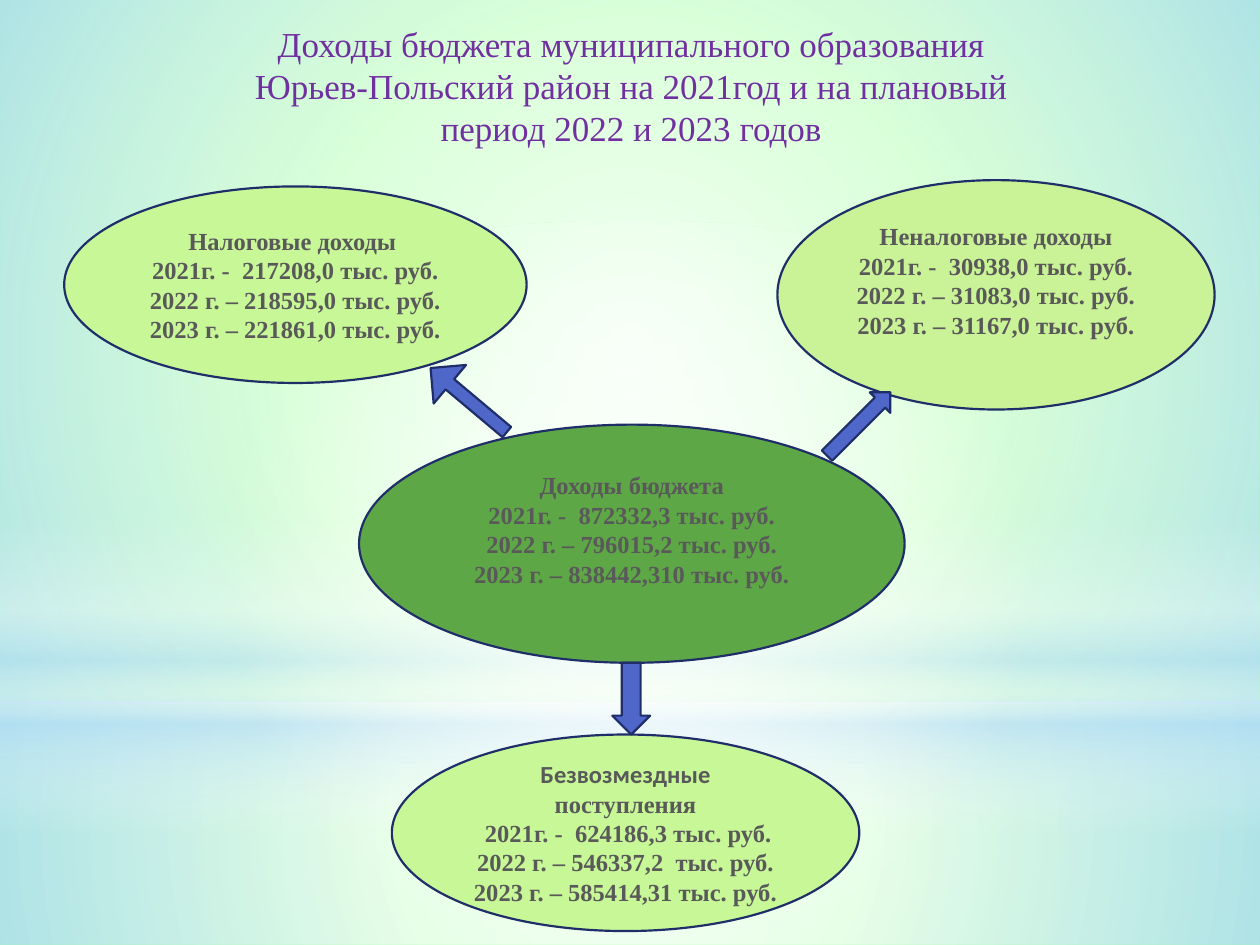
import pptx
import pptx.util
import pptx.dml.color
import pptx.enum.shapes
import pptx.enum.text
import pptx.oxml
import pptx.oxml.ns

Inches = pptx.util.Inches
Pt = pptx.util.Pt
SHAPES = pptx.enum.shapes.MSO_SHAPE

COLORS = {
    "background": "99FF99", "white": "FFFFFF", "sky": "B4DCFA",
    "title": "7030A0", "text": "595959", "outline": "1F2E69",
    "total": "5EA747", "source": "C7F797", "non_tax": "CAF297", "arrow": "4E67C8",
}
SERIF, SANS = "Times New Roman", "Calibri"

GLOWS = [
    (SHAPES.RECTANGLE, (0, 5.58, 10, 1.92), "circle",
     [(0, "white", 91), (37, "white", 76), (100, "sky", 79)]),
    (SHAPES.RECTANGLE, (0, 0, 10, 5.58), "circle",
     [(0, "white", 89), (48, "white", 62), (100, "sky", 79)]),
    (SHAPES.RECTANGLE, (0, 4.12, 10, 2.5), "linear",
     [(0, "white", 0), (29, "white", 30), (45, "sky", 40),
      (55, "white", 26), (65, "sky", 60), (100, "white", 0)]),
    (SHAPES.OVAL, (0, 1.75, 10, 5.58), "circle",
     [(0, "white", 100), (56, "white", 0)]),
]

TITLE = [
    [("Доходы бюджета муниципального образования", SERIF)],
    [(" Юрьев-Польский район на 2021год и на плановый ", SERIF)],
    [("период 2022 и 2023 годов", SERIF)],
]

INCOMES = [
    (SHAPES.FLOWCHART_CONNECTOR, (6.17, 1.43, 3.47, 1.82), "non_tax", 0.28, [
        [("Неналоговые доходы", SERIF)],
        [("2021г. -  30938,0 тыс. руб.", SERIF)],
        [("2022 г. – 31083,0 тыс. руб.", SERIF)],
        [("2023 г. – 31167,0 тыс. руб.", SERIF)]]),
    (SHAPES.FLOWCHART_CONNECTOR, (0.51, 1.48, 3.67, 1.56), "source", 0.05, [
        [("Налоговые доходы ", SERIF)],
        [("2021г. -  217208,0 тыс. руб.", SERIF)],
        [("2022 г. – 218595,0 тыс. руб.", SERIF)],
        [("2023 г. – 221861,0 тыс. руб.", SERIF)]]),
    (SHAPES.FLOWCHART_CONNECTOR, (3.11, 5.83, 3.71, 1.56), "source", 0.05, [
        [("Безвозмездные ", SANS), ("поступления", SERIF)],
        [(" ", SANS), ("2021г. -  624186,3 тыс. руб.", SERIF)],
        [("2022 г. – 546337,2  тыс. руб.", SERIF)],
        [("2023 г. – 585414,31 тыс. руб.", SERIF)]]),
    (SHAPES.OVAL, (2.85, 3.37, 4.33, 1.89), "total", 0.28, [
        [("Доходы бюджета", SERIF)],
        [("2021г. -  872332,3 тыс. руб.", SERIF)],
        [("2022 г. – 796015,2 тыс. руб.", SERIF)],
        [("2023 г. – 838442,310 тыс. руб.", SERIF)]]),
]

ARROWS = [
    (SHAPES.UP_ARROW, (3.52, 2.78, 0.4, 0.79), -50, (0.265, 0.5)),
    (SHAPES.RIGHT_ARROW, (6.46, 3.25, 0.71, 0.23), -45, (0.5, 0.5)),
    (SHAPES.DOWN_ARROW, (4.86, 5.26, 0.3, 0.57), 0, (0.5, 0.5)),
]


def rgb(color):
    return pptx.dml.color.RGBColor.from_string(COLORS[color])


def add_shape(slide, preset, place):
    shape = slide.shapes.add_shape(preset, *map(Inches, place))
    shape.shadow.inherit = False
    return shape


def add_outlined(slide, preset, place, color):
    shape = add_shape(slide, preset, place)
    shape.fill.solid()
    shape.fill.fore_color.rgb = rgb(color)
    shape.line.color.rgb = rgb("outline")
    shape.line.width = Pt(1.25)
    return shape


def add_glow(slide, preset, place, direction, stops):
    glow = add_shape(slide, preset, place)
    glow.line.fill.background()
    glow.fill.background()
    stop_xml = "".join(
        f'<a:gs pos="{position * 1000}"><a:srgbClr val="{COLORS[color]}">'
        f'<a:alpha val="{opacity * 1000}"/></a:srgbClr></a:gs>'
        for position, color, opacity in stops)
    shade = ('<a:lin ang="5400000" scaled="0"/>' if direction == "linear" else
             '<a:path path="circle"><a:fillToRect l="50000" t="50000" r="50000" b="50000"/></a:path>')
    gradient = pptx.oxml.parse_xml(
        f'<a:gradFill {pptx.oxml.ns.nsdecls("a")} rotWithShape="1">'
        f'<a:gsLst>{stop_xml}</a:gsLst>{shade}</a:gradFill>')
    properties = glow.element.spPr
    properties.replace(properties.find(pptx.oxml.ns.qn("a:noFill")), gradient)


def write(frame, lines, size, color, bold, bottom):
    frame.word_wrap = True
    frame.vertical_anchor = pptx.enum.text.MSO_ANCHOR.MIDDLE
    frame.margin_bottom = Inches(bottom)
    for index, line in enumerate(lines):
        paragraph = frame.add_paragraph() if index else frame.paragraphs[0]
        paragraph.alignment = pptx.enum.text.PP_ALIGN.CENTER
        for words, font in line:
            run = paragraph.add_run()
            run.text = words
            run.font.name = font
            run.font.size = Pt(size)
            run.font.bold = bold
            run.font.color.rgb = rgb(color)


def main():
    deck = pptx.Presentation()
    deck.slide_width, deck.slide_height = Inches(10), Inches(7.5)
    slide = deck.slides.add_slide(deck.slide_layouts[6])
    slide.background.fill.solid()
    slide.background.fill.fore_color.rgb = rgb("background")

    for glow in GLOWS:
        add_glow(slide, *glow)

    title = slide.shapes.add_textbox(*map(Inches, (0.51, 0.44, 9, 1.1)))
    write(title.text_frame, TITLE, 20, "title", False, 0.67)

    for preset, place, color, bottom, lines in INCOMES:
        income = add_outlined(slide, preset, place, color)
        write(income.text_frame, lines, 14, "text", True, bottom)

    for preset, place, turn, proportions in ARROWS:
        arrow = add_outlined(slide, preset, place, "arrow")
        arrow.rotation = turn
        for index, proportion in enumerate(proportions):
            arrow.adjustments[index] = proportion

    deck.save("out.pptx")


if __name__ == "__main__":
    main()
